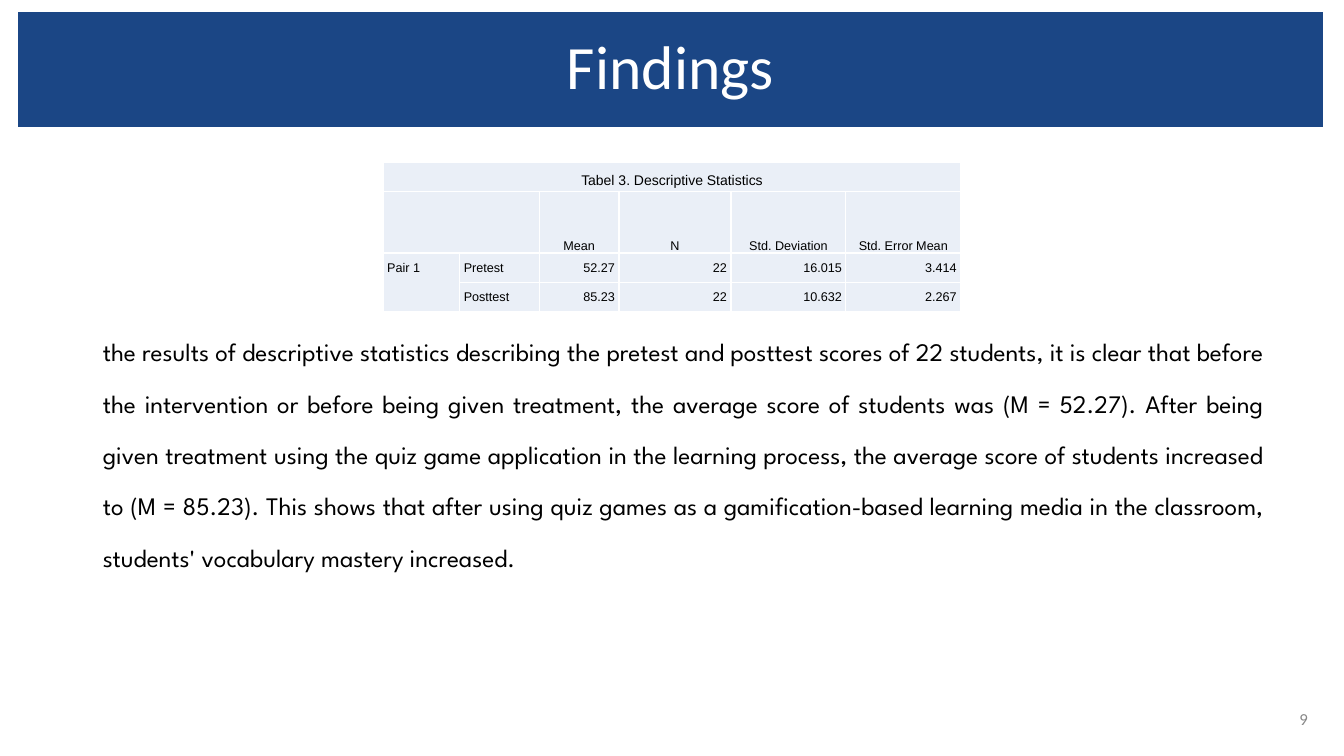
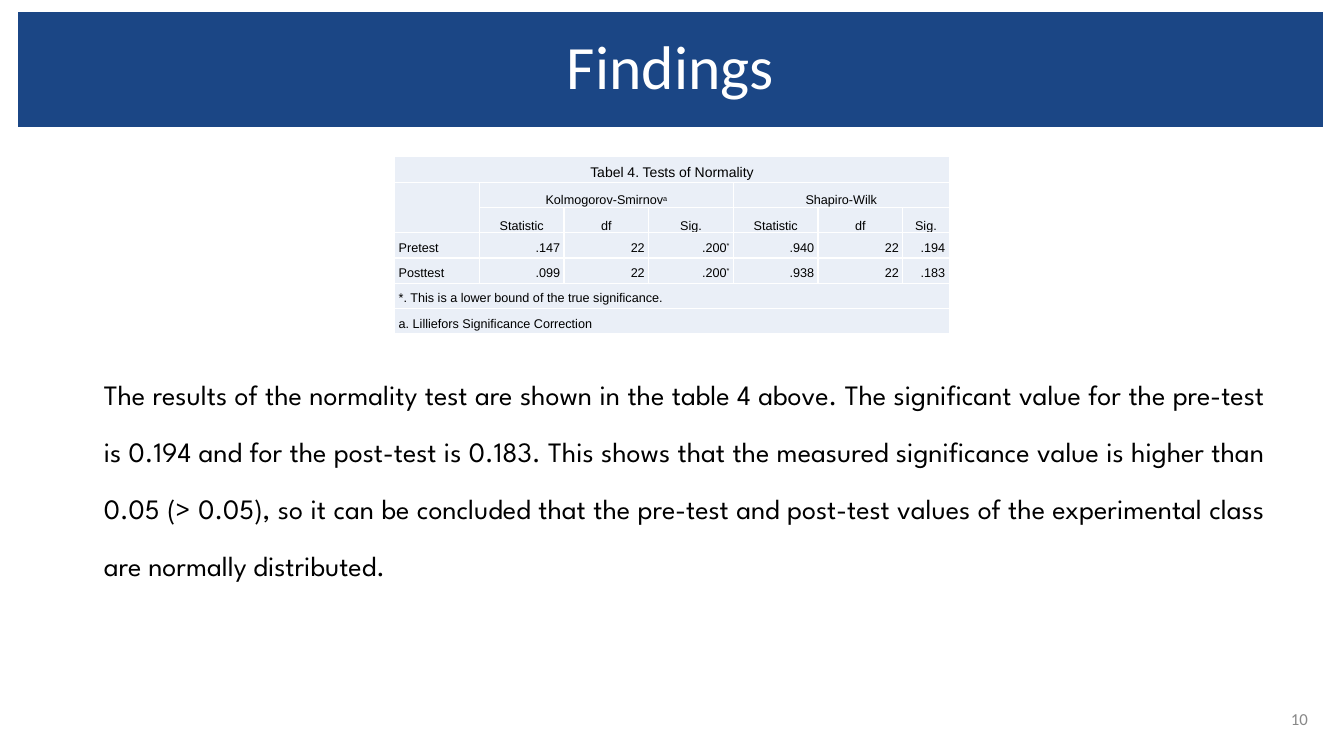
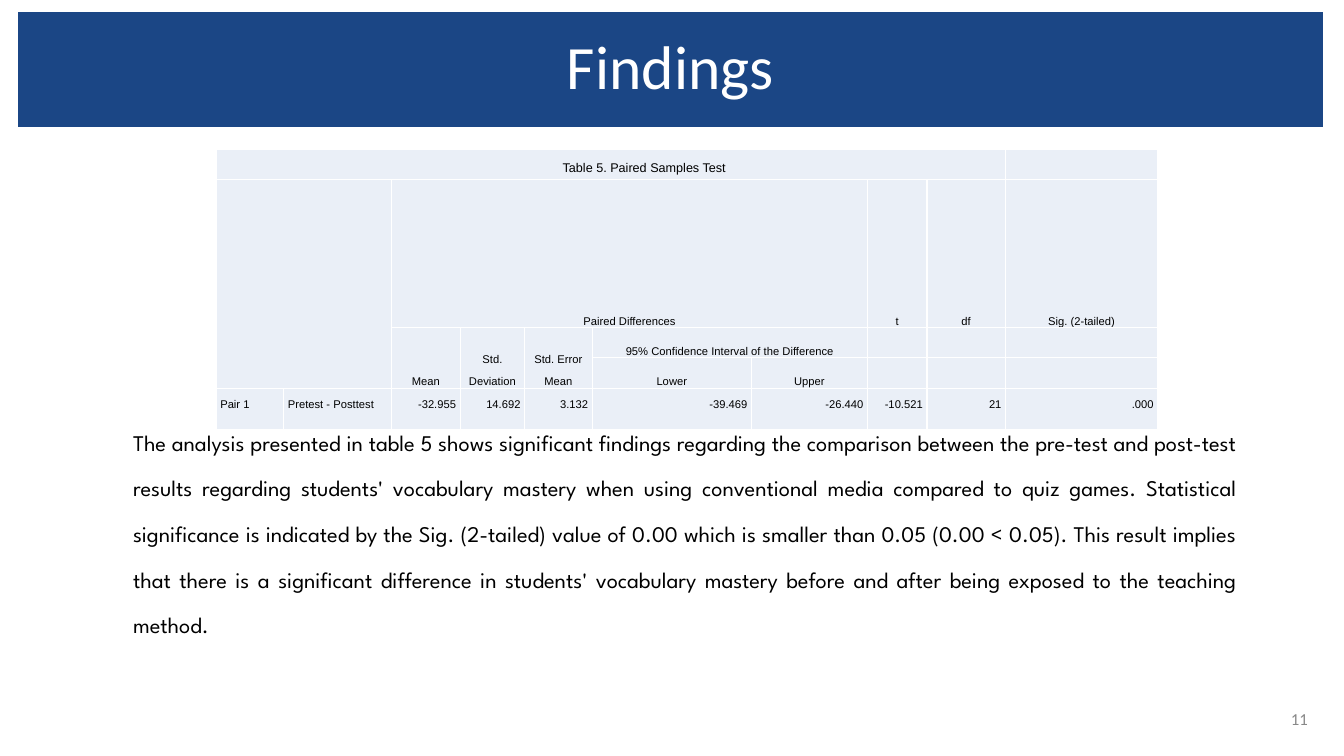
from lxml.etree import SubElement
from pptx import Presentation
from pptx.dml.color import RGBColor
from pptx.enum.shapes import MSO_SHAPE
from pptx.enum.text import MSO_ANCHOR, PP_ALIGN
from pptx.oxml.ns import qn
from pptx.util import Inches, Pt

COLORS = {"band": "1B4685", "cell": "EAEFF7", "white": "FFFFFF",
          "text": "000000", "number": "888888"}
SLIDE_W, SLIDE_H = 13.33, 7.5
TITLE = "Findings"
FIRST_NUMBER = 9
CELL_MARGIN = 0.04

# A tuple in a table cell is (text, superscript); merges are (row, column, rows, columns).
FINDINGS = [
    {
        "body": "the results of descriptive statistics describing the pretest and posttest "
                "scores of 22 students, it is clear that before the intervention or before "
                "being given treatment, the average score of students was (M = 52.27). After "
                "being given treatment using the quiz game application in the learning process, "
                "the average score of students increased to (M = 85.23). This shows that after "
                "using quiz games as a gamification-based learning media in the classroom, "
                "students' vocabulary mastery increased.",
        "body_box": (0.67, 3.08, 11.97), "body_size": 18,
        "top": 1.61, "caption_size": 10, "cell_size": 9,
        "header_rows": 2, "label_columns": 2,
        "widths": [0.76, 0.79, 0.79, 1.11, 1.14, 1.14],
        "heights": [0.29, 0.61, 0.29, 0.29],
        "rows": [
            ["Tabel 3. Descriptive Statistics"],
            ["", "", "Mean", "N", "Std. Deviation", "Std. Error Mean"],
            ["Pair 1", "Pretest", "52.27", "22", "16.015", "3.414"],
            ["", "Posttest", "85.23", "22", "10.632", "2.267"],
        ],
        "merges": [(0, 0, 1, 6), (1, 0, 1, 2), (2, 0, 2, 1)],
    },
    {
        "body": "The results of the normality test are shown in the table 4 above. The "
                "significant value for the pre-test is 0.194 and for the post-test is 0.183. "
                "This shows that the measured significance value is higher than 0.05 (> 0.05), "
                "so it can be concluded that the pre-test and post-test values of the "
                "experimental class are normally distributed.",
        "body_box": (0.68, 3.46, 11.97), "body_size": 20,
        "top": 1.55, "caption_size": 10, "cell_size": 9,
        "header_rows": 3, "label_columns": 1,
        "widths": [0.84] * 6 + [0.46],
        "heights": [0.26] + [0.25] * 6,
        "rows": [
            ["Tabel 4. Tests of Normality"],
            ["", ("Kolmogorov-Smirnov", "a"), "", "", "Shapiro-Wilk"],
            ["", "Statistic", "df", "Sig.", "Statistic", "df", "Sig."],
            ["Pretest", ".147", "22", (".200", "*"), ".940", "22", ".194"],
            ["Posttest", ".099", "22", (".200", "*"), ".938", "22", ".183"],
            ["*. This is a lower bound of the true significance."],
            ["a. Lilliefors Significance Correction"],
        ],
        "merges": [(0, 0, 1, 7), (1, 0, 2, 1), (1, 1, 1, 3), (1, 4, 1, 3),
                   (5, 0, 1, 7), (6, 0, 1, 7)],
    },
    {
        "body": "The analysis presented in table 5 shows significant findings regarding the "
                "comparison between the pre-test and post-test results regarding students' "
                "vocabulary mastery when using conventional media compared to quiz games. "
                "Statistical significance is indicated by the Sig. (2-tailed) value of 0.00 "
                "which is smaller than 0.05 (0.00 < 0.05). This result implies that there is a "
                "significant difference in students' vocabulary mastery before and after being "
                "exposed to the teaching method.",
        "body_box": (0.97, 4.02, 11.4), "body_size": 16,
        "top": 1.48, "caption_size": 9, "cell_size": 8, "caption_indent": 0.66,
        "header_rows": 4, "label_columns": 2,
        "widths": [0.67, 1.07, 0.68, 0.64, 0.67, 1.58, 1.15, 0.59, 0.48, 1.51],
        "heights": [0.21, 1.47, 0.2, 0.24, 0.41],
        "rows": [
            ["Table 5. Paired Samples Test"],
            ["", "", "Paired Differences", "", "", "", "", "t", "df", "Sig. (2-tailed)"],
            ["", "", "Mean", "Std. Deviation", "Std. Error Mean",
             "95% Confidence Interval of the Difference"],
            ["", "", "", "", "", "Lower", "Upper"],
            ["Pair 1", "Pretest - Posttest", "-32.955", "14.692", "3.132", "-39.469",
             "-26.440", "-10.521", "21", ".000"],
        ],
        "merges": [(0, 0, 1, 9), (1, 0, 3, 2), (1, 2, 1, 5), (2, 2, 2, 1),
                   (2, 3, 2, 1), (2, 4, 2, 1), (2, 5, 1, 2)],
    },
]


def rgb(name):
    return RGBColor.from_string(COLORS[name])


def style(paragraph, font, size, color, align, spacing=None):
    paragraph.alignment = align
    paragraph.line_spacing = spacing
    for run in paragraph.runs:
        run.font.name, run.font.size = font, Pt(size)
        run.font.color.rgb = rgb(color)


def add_band(slide):
    band = slide.shapes.add_shape(MSO_SHAPE.RECTANGLE, Inches(0.18), Inches(0.12),
                                  Inches(12.94), Inches(1.14))
    band.shadow.inherit = False
    band.fill.solid()
    band.fill.fore_color.rgb = rgb("band")
    band.line.fill.background()
    frame = band.text_frame
    frame.text = TITLE
    frame.vertical_anchor = MSO_ANCHOR.MIDDLE
    style(frame.paragraphs[0], "Calibri", 44, "white", PP_ALIGN.CENTER, 0.9)


def add_text(slide, text, box):
    textbox = slide.shapes.add_textbox(*map(Inches, box))
    frame = textbox.text_frame
    frame.word_wrap = True
    frame.text = text
    return frame


def add_number(slide, number):
    frame = add_text(slide, str(number), (12.5, 6.93, 0.57, 0.4))
    frame.vertical_anchor = MSO_ANCHOR.MIDDLE
    style(frame.paragraphs[0], "Calibri", 12, "number", PP_ALIGN.RIGHT)


def add_body(slide, finding):
    frame = add_text(slide, finding["body"], (*finding["body_box"], 1.46))
    frame.margin_left = Inches(0.35)
    style(frame.paragraphs[0], "League Spartan", finding["body_size"], "text",
          PP_ALIGN.JUSTIFY, 1.7)


def add_borders(cell):
    properties = cell._tc.get_or_add_tcPr()
    for side in ("a:lnL", "a:lnR", "a:lnT", "a:lnB"):
        line = SubElement(properties, qn(side), w=str(Pt(1)))
        fill = SubElement(line, qn("a:solidFill"))
        SubElement(fill, qn("a:srgbClr"), val=COLORS["white"])


def fill_cell(cell, content, size, align, anchor):
    add_borders(cell)
    cell.fill.solid()
    cell.fill.fore_color.rgb = rgb("cell")
    cell.margin_left = cell.margin_right = Inches(CELL_MARGIN)
    cell.margin_top = cell.margin_bottom = 0
    cell.vertical_anchor = anchor
    text, superscript = content if isinstance(content, tuple) else (content, "")
    paragraph = cell.text_frame.paragraphs[0]
    paragraph.text = text
    if superscript:
        mark = paragraph.add_run()
        mark.text = superscript
        mark._r.get_or_add_rPr().set("baseline", "30000")
    style(paragraph, "Arial", size, "text", align, Pt(16))


def add_statistics(slide, finding):
    widths, heights = finding["widths"], finding["heights"]
    left = (SLIDE_W - sum(widths)) / 2
    table = slide.shapes.add_table(
        len(heights), len(widths), Inches(left), Inches(finding["top"]),
        Inches(sum(widths)), Inches(sum(heights))).table
    table.first_row = table.horz_banding = False
    for column, width in zip(table.columns, widths):
        column.width = Inches(width)
    for r, (contents, height) in enumerate(zip(finding["rows"], heights)):
        table.rows[r].height = Inches(height)
        for c in range(len(widths)):
            size, align, anchor = finding["cell_size"], PP_ALIGN.CENTER, MSO_ANCHOR.BOTTOM
            if r == 0:
                size, anchor = finding["caption_size"], MSO_ANCHOR.MIDDLE
            elif r >= finding["header_rows"]:
                is_label = c < finding["label_columns"]
                align = PP_ALIGN.LEFT if is_label else PP_ALIGN.RIGHT
                anchor = MSO_ANCHOR.TOP
            content = contents[c] if c < len(contents) else ""
            fill_cell(table.cell(r, c), content, size, align, anchor)
    for r, c, row_span, column_span in finding["merges"]:
        table.cell(r, c).merge(table.cell(r + row_span - 1, c + column_span - 1))
    table.cell(0, 0).margin_left = Inches(CELL_MARGIN + finding.get("caption_indent", 0))


def main():
    deck = Presentation()
    deck.slide_width, deck.slide_height = Inches(SLIDE_W), Inches(SLIDE_H)
    for number, finding in enumerate(FINDINGS, FIRST_NUMBER):
        slide = deck.slides.add_slide(deck.slide_layouts[6])
        add_number(slide, number)
        add_band(slide)
        add_statistics(slide, finding)
        add_body(slide, finding)
    deck.save("out.pptx")


if __name__ == "__main__":
    main()
